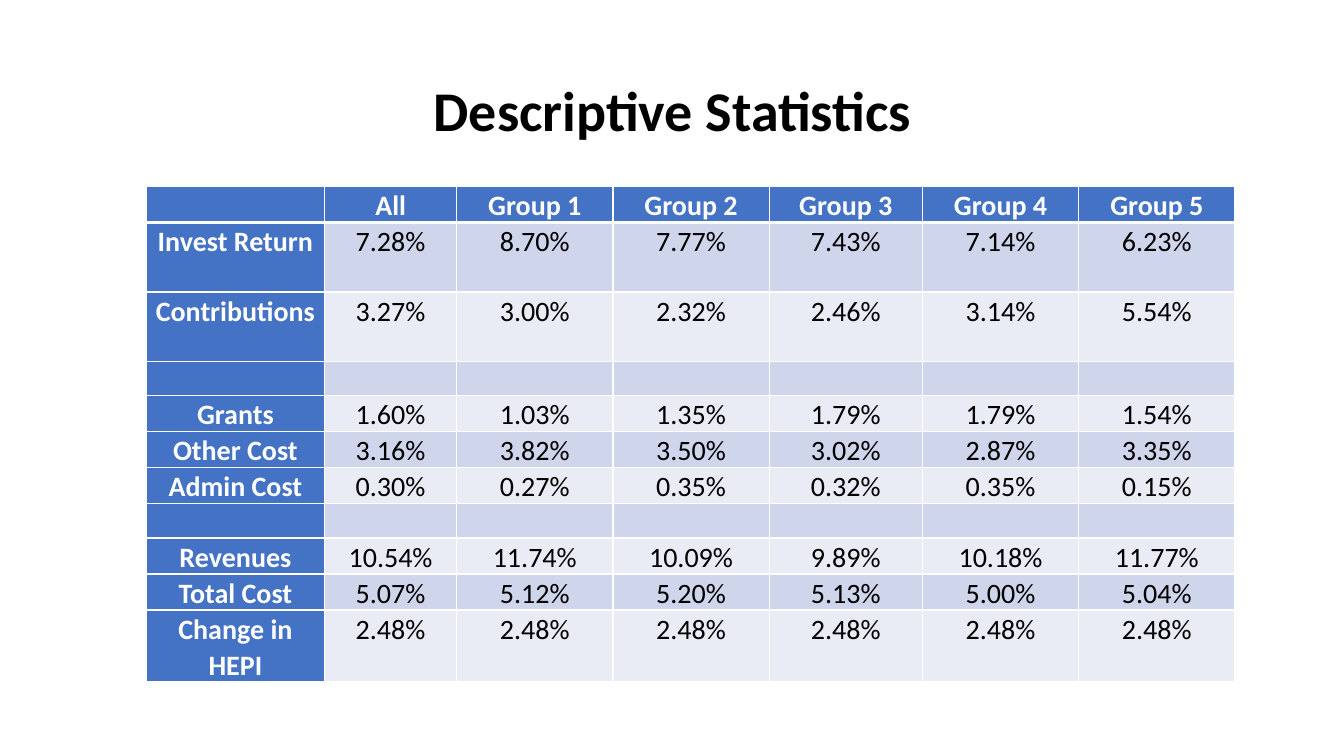
import lxml.etree
import pptx
import pptx.dml.color
import pptx.enum.text
import pptx.oxml.ns
import pptx.util

INCH = pptx.util.Inches
CENTER = pptx.enum.text.PP_ALIGN.CENTER
MIDDLE = pptx.enum.text.MSO_ANCHOR.MIDDLE
TITLE_BOX = (0.92, 0.4, 11.5, 1.45)
TABLE_BOX = (1.45, 1.85, 10.8, 4.79)
COLUMN_WIDTHS = (1.77, 1.31, 1.55, 1.55, 1.52, 1.55, 1.55)
ROW_HEIGHT, TALL_ROW_HEIGHT = 0.34, 0.69
TALL_ROWS = ("Invest Return", "Contributions", "Change in HEPI")
BLUE, BANDS = "4472C4", ("E9EBF5", "CFD5EA")
WHITE, BLACK = "FFFFFF", "000000"
TITLE_FORMAT = {"size": pptx.util.Pt(40), "name": "Calibri", "bold": True}
HEAD_FORMAT = {"size": pptx.util.Pt(20), "name": "Calibri", "bold": True}
VALUE_FORMAT = {**HEAD_FORMAT, "bold": False}
BLANK_ROW = ("",) * len(COLUMN_WIDTHS)
STATISTICS = (
    ("", "All", "Group 1", "Group 2", "Group 3", "Group 4", "Group 5"),
    ("Invest Return", "7.28%", "8.70%", "7.77%", "7.43%", "7.14%", "6.23%"),
    ("Contributions", "3.27%", "3.00%", "2.32%", "2.46%", "3.14%", "5.54%"),
    BLANK_ROW,
    ("Grants", "1.60%", "1.03%", "1.35%", "1.79%", "1.79%", "1.54%"),
    ("Other Cost", "3.16%", "3.82%", "3.50%", "3.02%", "2.87%", "3.35%"),
    ("Admin Cost", "0.30%", "0.27%", "0.35%", "0.32%", "0.35%", "0.15%"),
    BLANK_ROW,
    ("Revenues", "10.54%", "11.74%", "10.09%", "9.89%", "10.18%", "11.77%"),
    ("Total Cost", "5.07%", "5.12%", "5.20%", "5.13%", "5.00%", "5.04%"),
    ("Change in HEPI",) + ("2.48%",) * 6,
)


def color(value):
    """Turn a hex string into a colour."""
    return pptx.dml.color.RGBColor.from_string(value)


def set_values(target, values):
    """Set every attribute named in a dict."""
    for name, value in values.items():
        setattr(target, name, value)


def write(frame, text, font_values, ink, spacing):
    """Write one centred paragraph, keeping its line height when blank."""
    para = frame.paragraphs[0]
    set_values(para, {"alignment": CENTER, "line_spacing": spacing})
    if text:
        span = para.add_run()
        span.text = text
        set_values(span.font, font_values)
        span.font.color.rgb = color(ink)
    else:
        lxml.etree.SubElement(para._p, pptx.oxml.ns.qn("a:endParaRPr"),
                              sz=str(font_values["size"].centipoints))


def add_borders(cell, widths):
    """Draw white borders of the given point widths by side."""
    properties = cell._tc.get_or_add_tcPr()
    for side, width in widths.items():
        line = lxml.etree.SubElement(properties, pptx.oxml.ns.qn(f"a:ln{side}"),
                                     w=str(pptx.util.Pt(width)))
        fill = lxml.etree.SubElement(line, pptx.oxml.ns.qn("a:solidFill"))
        lxml.etree.SubElement(fill, pptx.oxml.ns.qn("a:srgbClr"), val=WHITE)


def draw_title(page, box):
    """Place the slide title in its box."""
    frame = page.shapes.add_textbox(*map(INCH, box)).text_frame
    set_values(frame, {"word_wrap": True, "vertical_anchor": MIDDLE})
    write(frame, "Descriptive Statistics", TITLE_FORMAT, BLACK, 0.9)


def style_cell(cell, text, row, column):
    """Fill, border and write one cell according to its place."""
    is_head = row == 0 or column == 0
    add_borders(cell, {"L": 1, "R": 1, "T": 3 if row == 1 else 1, "B": 3 if row == 0 else 1})
    cell.fill.solid()
    cell.fill.fore_color.rgb = color(BLUE if is_head else BANDS[row % 2])
    set_values(cell, {"margin_left": INCH(0.07), "margin_right": INCH(0.07),
                      "margin_top": 0, "margin_bottom": 0})
    write(cell.text_frame, text, HEAD_FORMAT if is_head else VALUE_FORMAT,
          WHITE if is_head else BLACK, 1.07)


def draw_table(page, box):
    """Place the statistics table in its box, with columns shared by width."""
    table = page.shapes.add_table(len(STATISTICS), len(COLUMN_WIDTHS), *map(INCH, box)).table
    table.first_col = True
    for column, share in zip(table.columns, COLUMN_WIDTHS):
        column.width = INCH(box[2] * share / sum(COLUMN_WIDTHS))
    for row, texts in enumerate(STATISTICS):
        table.rows[row].height = INCH(TALL_ROW_HEIGHT if texts[0] in TALL_ROWS else ROW_HEIGHT)
        for column, text in enumerate(texts):
            style_cell(table.cell(row, column), text, row, column)


def main():
    """Build and save the deck."""
    deck = pptx.Presentation()
    set_values(deck, {"slide_width": INCH(13.33), "slide_height": INCH(7.5)})
    page = deck.slides.add_slide(deck.slide_layouts[6])
    draw_title(page, TITLE_BOX)
    draw_table(page, TABLE_BOX)
    deck.save("out.pptx")


if __name__ == "__main__":
    main()
